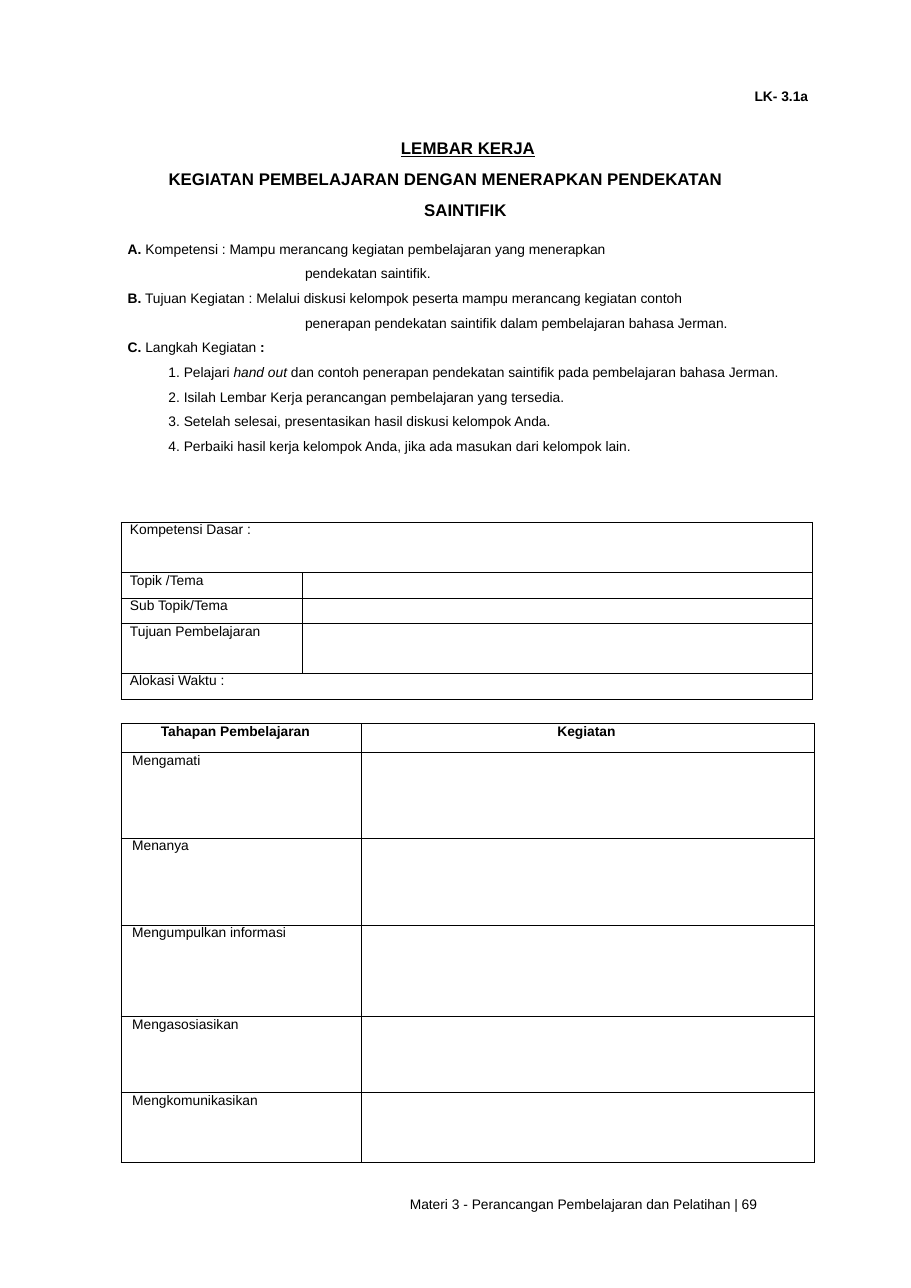
from lxml.etree import SubElement
from pptx import Presentation
from pptx.dml.color import RGBColor
from pptx.enum.text import MSO_ANCHOR, MSO_AUTO_SIZE, PP_ALIGN
from pptx.oxml.ns import qn
from pptx.util import Inches, Pt

BLACK = RGBColor(0, 0, 0)
LEFT = 1.1
FRAME = dict(margin_left=0, margin_right=0, margin_top=0, margin_bottom=0,
             vertical_anchor=MSO_ANCHOR.TOP)
BOX = dict(FRAME, word_wrap=True, auto_size=MSO_AUTO_SIZE.NONE)
SMALL = dict(name="Arial", size=Pt(9), bold=False)
BOLD = dict(SMALL, bold=True)
HEAD = dict(BOLD, size=Pt(11))
TITLE = dict(alignment=PP_ALIGN.LEFT, line_spacing=Pt(20.4))
LIST = dict(alignment=PP_ALIGN.LEFT, line_spacing=Pt(16.1))

HEADS = [
    (2.54, [("LEMBAR KERJA", dict(HEAD, underline=True))]),
    (0.43, [("KEGIATAN PEMBELAJARAN DENGAN MENERAPKAN PENDEKATAN", HEAD)]),
    (2.75, [("SAINTIFIK", HEAD)]),
]
STEPS = [
    (0.06, [("A.", BOLD), (" Kompetensi : Mampu merancang kegiatan "
                           "pembelajaran yang menerapkan", SMALL)]),
    (1.67, [("pendekatan saintifik.", SMALL)]),
    (0.06, [("B.", BOLD), (" Tujuan Kegiatan : Melalui diskusi kelompok "
                           "peserta mampu merancang kegiatan contoh", SMALL)]),
    (1.67, [("penerapan pendekatan saintifik dalam pembelajaran "
             "bahasa Jerman.", SMALL)]),
    (0.06, [("C.", BOLD), (" Langkah Kegiatan", SMALL), (" :", BOLD)]),
    (0.43, [("1. Pelajari", SMALL), (" hand out", dict(SMALL, italic=True)),
            (" dan contoh penerapan pendekatan saintifik pada "
             "pembelajaran bahasa Jerman.", SMALL)]),
    (0.43, [("2. Isilah Lembar Kerja perancangan pembelajaran "
             "yang tersedia.", SMALL)]),
    (0.43, [("3. Setelah selesai, presentasikan hasil diskusi "
             "kelompok Anda.", SMALL)]),
    (0.43, [("4. Perbaiki hasil kerja kelompok Anda, jika ada masukan "
             "dari kelompok lain.", SMALL)]),
]
TOPICS = ["Kompetensi Dasar :", "Topik /Tema", "Sub Topik/Tema",
          "Tujuan Pembelajaran", "Alokasi Waktu :"]
STAGES = ["Mengamati", "Menanya", "Mengumpulkan informasi",
          "Mengasosiasikan", "Mengkomunikasikan"]


def style(item, form):
    for key, value in form.items():
        setattr(item, key, value)


def write(para, indent, runs, form):
    props = para._p.get_or_add_pPr()
    props.set("marL", str(Inches(indent)))
    props.set("indent", "0")
    style(para, form)
    for text, font in runs:
        run = para.add_run()
        run.text = text
        style(run.font, font)
        run.font.color.rgb = BLACK


def fill_text(shape, lines, form):
    frame = shape.text_frame
    style(frame, BOX)
    for n, (indent, runs) in enumerate(lines):
        para = frame.add_paragraph() if n else frame.paragraphs[0]
        write(para, indent, runs, form)


def add_text(slide, box, lines, form):
    shape = slide.shapes.add_textbox(*map(Inches, box))
    fill_text(shape, lines, form)


def add_title(slide, box, lines):
    title = slide.shapes.title
    style(title, dict(zip(("left", "top", "width", "height"),
                          map(Inches, box))))
    fill_text(title, lines, TITLE)


def add_edges(cell):
    props = cell._tc.get_or_add_tcPr()
    for side in ("lnL", "lnR", "lnT", "lnB"):
        line = SubElement(props, qn(f"a:{side}"), w=str(Pt(0.75)))
        solid = SubElement(line, qn("a:solidFill"))
        SubElement(solid, qn("a:srgbClr"), val=str(BLACK))


def add_grid(slide, box, cols, rows, texts, spans=()):
    shape = slide.shapes.add_table(len(rows), len(cols), *map(Inches, box))
    table = shape.table
    style(table, dict(first_row=False, horz_banding=False))
    for col, width in zip(table.columns, cols):
        col.width = Inches(width)
    for row, height in zip(table.rows, rows):
        row.height = Inches(height)
    for r in range(len(rows)):
        for c in range(len(cols)):
            cell = table.cell(r, c)
            style(cell, FRAME)
            add_edges(cell)
            cell.fill.background()
            para = cell.text_frame.paragraphs[0]
            if (r, c) in texts:
                indent, text, font = texts[r, c]
                write(para, indent, [(text, font)], {})
            else:
                SubElement(para._p, qn("a:endParaRPr"), sz="900")
    for r in spans:
        table.cell(r, 0).merge(table.cell(r, len(cols) - 1))


def main():
    deck = Presentation()
    style(deck, dict(slide_width=Inches(8.27), slide_height=Inches(11.69)))
    slide = deck.slides.add_slide(deck.slide_layouts[5])

    add_text(slide, (LEFT, 0.8, 6.4, 0.15),
             [(5.75, [("LK- 3.1a", BOLD)])], {})
    add_title(slide, (LEFT, 1.15, 6.4, 0.85), HEADS)
    add_text(slide, (LEFT, 2.11, 6.4, 2.02), STEPS, LIST)

    topics = {(n, 0): (0.08, text, SMALL) for n, text in enumerate(TOPICS)}
    add_grid(slide, (LEFT, 4.74, 6.29, 1.61), (1.65, 4.63),
             (0.46, 0.23, 0.23, 0.45, 0.24), topics, (0, 4))

    stages = {(n, 0): (0.1, text, SMALL) for n, text in enumerate(STAGES, 1)}
    stages[0, 0] = (0.36, "Tahapan Pembelajaran", BOLD)
    stages[0, 1] = (1.78, "Kegiatan", BOLD)
    add_grid(slide, (LEFT, 6.57, 6.29, 3.98), (2.18, 4.11),
             (0.26, 0.78, 0.79, 0.83, 0.69, 0.63), stages)

    add_text(slide, (3.72, 10.85, 3.58, 0.17),
             [(0, [("Materi 3 - Perancangan Pembelajaran dan Pelatihan | 69",
                    SMALL)])], dict(alignment=PP_ALIGN.JUSTIFY))
    deck.save("out.pptx")


if __name__ == "__main__":
    main()
